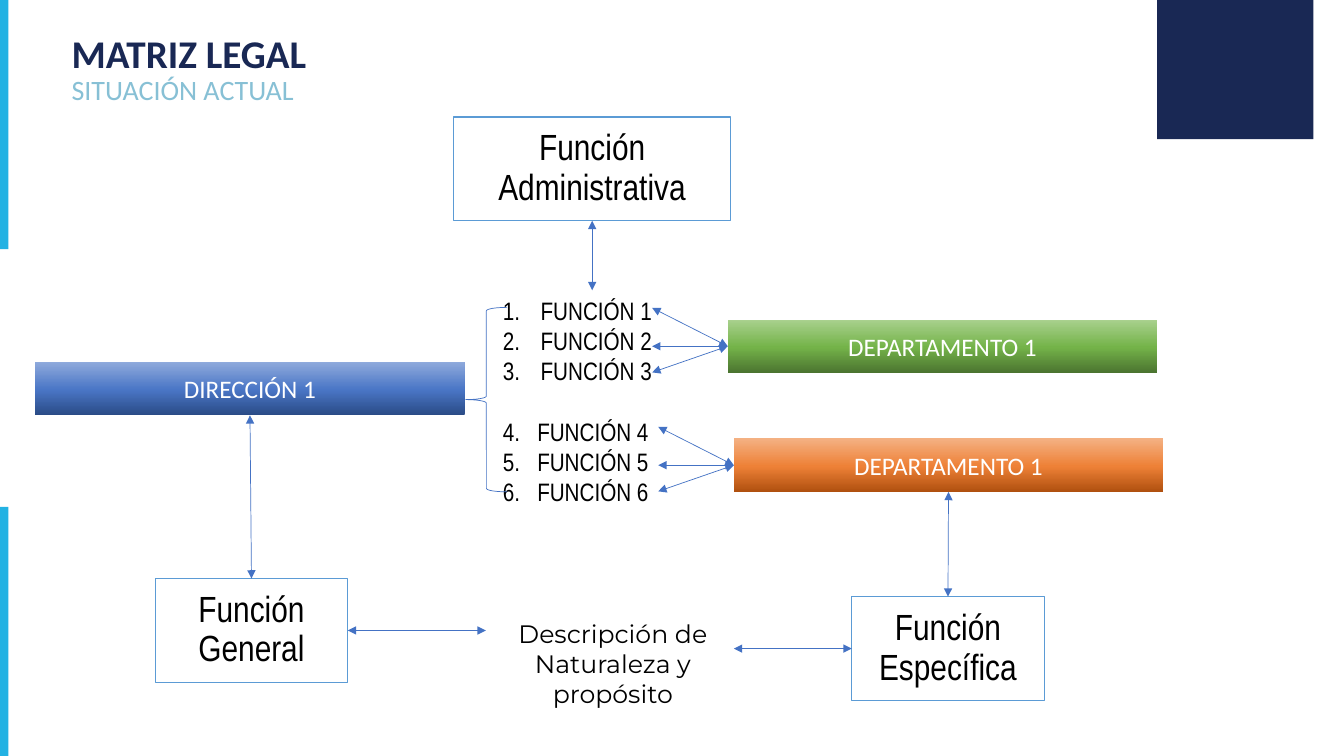
from copy import deepcopy
from dataclasses import dataclass

from lxml import etree
from pptx import Presentation
from pptx.dml.color import RGBColor
from pptx.enum import shapes, text
from pptx.oxml import ns
from pptx.util import Pt


@dataclass(frozen=True)
class Theme:
    navy: str = "192854"
    sky: str = "23B2E3"
    pale: str = "87C0D5"
    white: str = "FFFFFF"
    black: str = "000000"
    outline: str = "5B9BD5"
    arrow: str = "4472C4"
    # Gradients run from the bottom edge to the top edge
    blue: tuple = ("2A4B86", "4A76C6", "8FAADC")
    green: tuple = ("4B7430", "74B349", "A9D18E")
    orange: tuple = ("B0500F", "EE8137", "F4B183")
    stops: tuple = (0, 0.48, 1)
    plain: str = "Calibri"
    narrow: str = "Arial Narrow"
    wide: str = "Montserrat"
    title: int = 28
    subtitle: int = 20
    box: int = 26
    body: int = 18


THEME = Theme()
PRESET = shapes.MSO_SHAPE
CENTER = text.PP_ALIGN.CENTER
MIDDLE = text.MSO_ANCHOR.MIDDLE
TOP, LEFT, BOTTOM, RIGHT = range(4)  # connection sites of a rectangle


def set_format(target, **formats):
    for attribute, value in formats.items():
        setattr(target, attribute, value)


def write(paragraph, words, font, size, colour, bold=False):
    run = paragraph.add_run()
    run.text = words
    set_format(run.font, name=font, size=Pt(size), bold=bold)
    run.font.color.rgb = RGBColor.from_string(colour)


def add_preset(slide, preset, frame, fill=None, line=None, weight=0.5):
    shape = slide.shapes.add_shape(preset, *map(Pt, frame))
    shape.shadow.inherit = False
    if fill:
        shape.fill.solid()
        shape.fill.fore_color.rgb = RGBColor.from_string(fill)
    else:
        shape.fill.background()
    if line:
        shape.line.color.rgb = RGBColor.from_string(line)
        shape.line.width = Pt(weight)
    else:
        shape.line.fill.background()
    return shape


def add_unit(slide, words, left, top, colours):
    """Gradient bar that names a unit of the organisation."""
    unit = add_preset(slide, PRESET.RECTANGLE, (left, top, 306.72, 38.16))
    unit.fill.gradient()
    unit.fill.gradient_angle = 90
    stop_list = unit.fill.gradient_stops[0]._gs.getparent()
    stop_list.append(deepcopy(stop_list[0]))
    for stop, colour, position in zip(unit.fill.gradient_stops, colours, THEME.stops):
        stop.color.rgb = RGBColor.from_string(colour)
        stop.position = position
    unit.text_frame.vertical_anchor = MIDDLE
    label = unit.text_frame.paragraphs[0]
    label.alignment = CENTER
    write(label, words, THEME.plain, THEME.body, THEME.white)
    return unit


def add_function_box(slide, words, left, top, width=137.52):
    box = add_preset(slide, PRESET.RECTANGLE, (left, top, width, 74.16),
                     THEME.white, THEME.outline, 1)
    inset = Pt(8)
    set_format(box.text_frame, word_wrap=True, vertical_anchor=MIDDLE,
               margin_left=inset, margin_right=inset,
               margin_top=inset, margin_bottom=inset)
    label = box.text_frame.paragraphs[0]
    set_format(label, alignment=CENTER, line_spacing=0.9)
    write(label, words, THEME.narrow, THEME.box, THEME.black)
    return box


def add_text(slide, frame):
    area = slide.shapes.add_textbox(*map(Pt, frame))
    area.text_frame.word_wrap = True
    return area


def add_function_list(slide):
    area = add_text(slide, (352.08, 207.36, 141.84, 159.84))
    for number in range(1, 7):
        first_group = number <= 3
        item = (area.text_frame.paragraphs[0] if number == 1
                else area.text_frame.add_paragraph())
        if number == 4:
            item.space_before = Pt(21.6)
        indent = Pt(27 if first_group else 24.6)
        properties = item._p.get_or_add_pPr()
        properties.set("marL", str(indent))
        properties.set("indent", str(-indent))
        etree.SubElement(properties, ns.qn("a:buFont"), typeface="+mj-lt")
        etree.SubElement(properties, ns.qn("a:buAutoNum"), type="arabicPeriod",
                         startAt="1" if first_group else "4")
        write(item, f"FUNCIÓN {number}", THEME.narrow, THEME.body, THEME.black)
    return area


def add_arrow(slide, start, site, point=(0, 0), end=None):
    """Double arrow from a shape to a point, or to the top of another shape."""
    arrow = slide.shapes.add_connector(
        shapes.MSO_CONNECTOR.STRAIGHT, 0, 0, *map(Pt, point))
    arrow.begin_connect(start, site)
    if end is not None:
        arrow.end_connect(end, TOP)
    arrow.line.color.rgb = RGBColor.from_string(THEME.arrow)
    arrow.line.width = Pt(0.5)
    line = arrow.line._get_or_add_ln()
    for tip in ("a:headEnd", "a:tailEnd"):
        etree.SubElement(line, ns.qn(tip), type="triangle")
    etree.SubElement(arrow._element.spPr, ns.qn("a:effectLst"))


def add_title(slide):
    title = slide.shapes.title
    set_format(title, left=Pt(43.92), top=Pt(24.48),
               width=Pt(349.92), height=Pt(51.84))
    set_format(title.text_frame, word_wrap=True, vertical_anchor=MIDDLE,
               auto_size=text.MSO_AUTO_SIZE.NONE)
    heading = title.text_frame.paragraphs[0]
    set_format(heading, alignment=text.PP_ALIGN.LEFT, line_spacing=0.9)
    write(heading, "MATRIZ LEGAL", THEME.plain, THEME.title, THEME.navy, True)
    heading.add_line_break()
    write(heading, "SITUACIÓN ACTUAL", THEME.plain, THEME.subtitle, THEME.pale)


def main():
    deck = Presentation()
    set_format(deck, slide_width=Pt(960), slide_height=Pt(540))
    slide = deck.slides.add_slide(deck.slide_layouts[5])
    add_title(slide)

    # Corner block and edge bars
    add_preset(slide, PRESET.RECTANGLE, (826.56, 0, 111.6, 99.36), THEME.navy)
    for top in (0, 362):
        add_preset(slide, PRESET.RECTANGLE, (0, top, 6, 178), THEME.sky)

    # Units, functions and the brace that gathers them
    direction = add_unit(slide, "DIRECCIÓN 1", 25.2, 258.48, THEME.blue)
    functions = add_function_list(slide)
    departments = [
        add_unit(slide, "DEPARTAMENTO 1", 519.84, 228.24, THEME.green),
        add_unit(slide, "DEPARTAMENTO 1", 524.16, 313.2, THEME.orange),
    ]
    add_preset(slide, PRESET.LEFT_BRACE, (332.64, 219.6, 29.52, 131.76),
               line=THEME.arrow)

    # Each department reaches three functions
    for department in departments:
        middle = department.top.pt + department.height.pt / 2
        for rise in (18.7, 0, -27.4):
            add_arrow(slide, department, LEFT,
                      (department.left.pt - 54, middle + rise))

    # Kinds of function
    administrative = add_function_box(slide, "Función Administrativa", 324, 83.52, 198)
    general = add_function_box(slide, "Función General", 110.88, 413.28)
    specific = add_function_box(slide, "Función Específica", 608.4, 426.24)
    add_arrow(slide, administrative, BOTTOM, end=functions)
    add_arrow(slide, direction, BOTTOM, end=general)
    add_arrow(slide, departments[1], BOTTOM, end=specific)
    add_arrow(slide, general, RIGHT, (347.04, 450.36))
    add_arrow(slide, specific, LEFT, (524.16, 463.32))

    # Description shared by the general and specific functions
    purpose = add_text(slide, (352.08, 437.76, 171.36, 72.72)).text_frame.paragraphs[0]
    purpose.alignment = CENTER
    write(purpose, "Descripción de Naturaleza y propósito",
          THEME.wide, THEME.body, THEME.black)

    deck.save("out.pptx")


if __name__ == "__main__":
    main()
